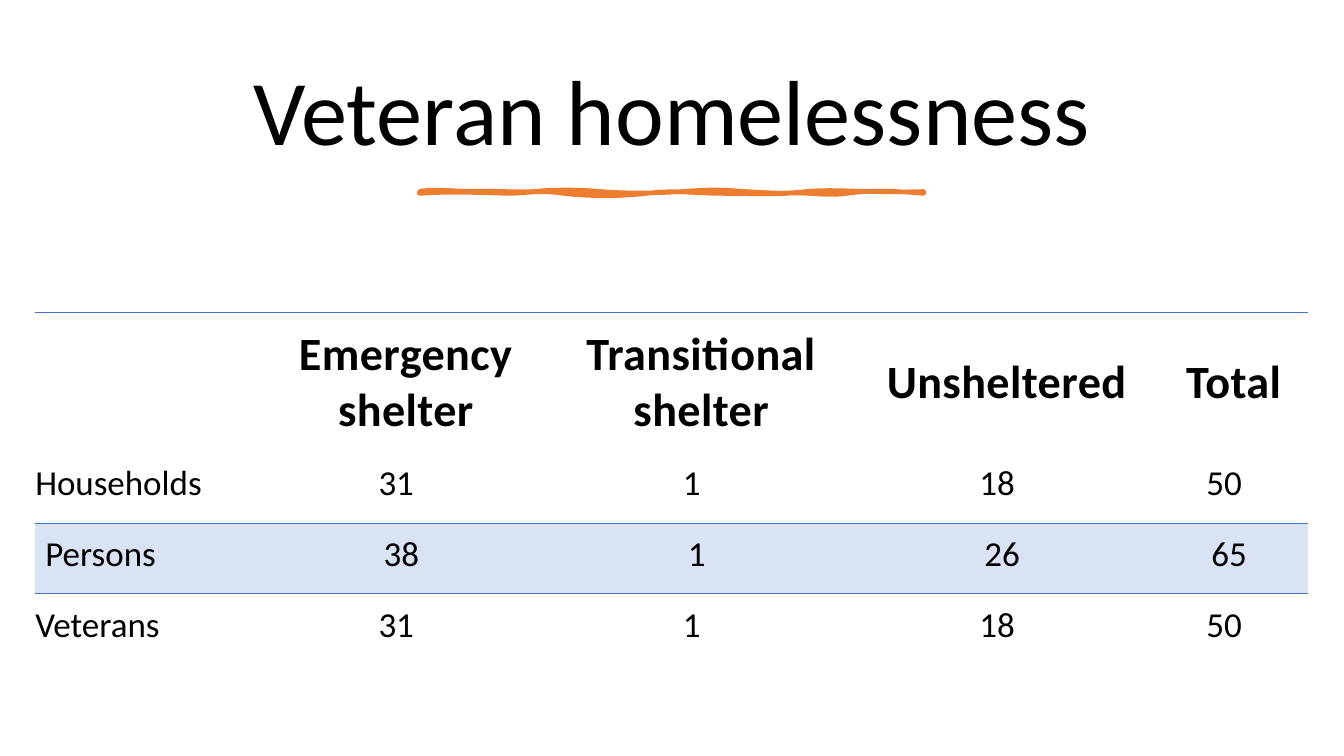
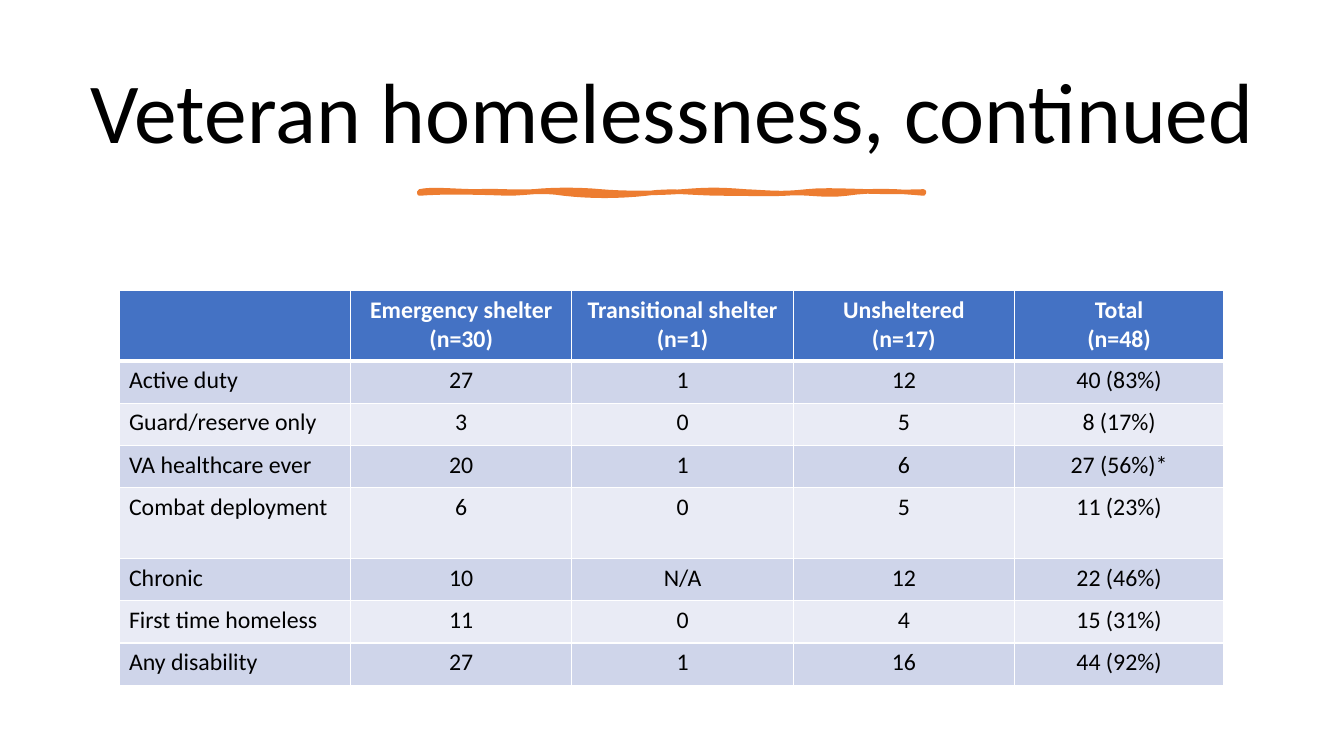
from lxml import etree
from pptx import Presentation
from pptx import util as u
from pptx.dml.color import RGBColor
from pptx.enum import text as t
from pptx.oxml.ns import qn

PX = 9144
FONT = "Calibri"
BLACK, WHITE, BLUE, ORANGE = "000000", "FFFFFF", "4472C4", "ED7D31"
HIGHLIGHT, BAND_DARK, BAND_LIGHT = "DAE3F3", "CFD5EA", "E9EBF5"
PLAIN_TABLE = "{2D5ABB26-0587-4C30-8999-92F81FD0307C}"
TITLE_BOX = (70, 46, 1193, 137)
UNDERLINE_AT = (416, 190)
UNDERLINE_CURVES = [
    (12, -3, 38, 0, 57, 0), (76, -1, 93, 1, 113, 0), (133, -2, 158, -2, 180, 0),
    (201, 2, 237, 2, 261, 0), (286, -2, 298, -2, 323, 0), (347, 1, 358, 3, 384, 0),
    (410, -3, 451, 2, 500, 0), (501, 1, 500, 1, 500, 2), (479, 0, 449, -2, 424, 2),
    (399, 5, 385, 0, 363, 2), (340, 3, 331, 2, 301, 2), (271, 2, 251, -2, 225, 2),
    (198, 5, 169, 5, 143, 2), (118, -2, 107, 2, 87, 2), (67, 1, 22, 0, 0, 2),
    (0, 1, 0, 0, 0, 0),
]

SHELTER_ROWS = [
    ["", "Emergency shelter", "Transitional shelter", "Unsheltered", "Total"],
    ["Households", "31", "1", "18", "50"],
    ["Persons", "38", "1", "26", "65"],
    ["Veterans", "31", "1", "18", "50"],
]
DETAIL_ROWS = [
    ["", "Emergency shelter\n(n=30)", "Transitional shelter\n(n=1)", "Unsheltered\n(n=17)", "Total\n(n=48)"],
    ["Active duty", "27", "1", "12", "40 (83%)"],
    ["Guard/reserve only", "3", "0", "5", "8 (17%)"],
    ["VA healthcare ever", "20", "1", "6", "27 (56%)*"],
    ["Combat deployment", "6", "0", "5", "11 (23%)"],
    ["Chronic", "10", "N/A", "12", "22 (46%)"],
    ["First time homeless", "11", "0", "4", "15 (31%)"],
    ["Any disability", "27", "1", "16", "44 (92%)"],
]


def px(length):
    return u.Emu(round(length * PX))


def rgb(color):
    return RGBColor.from_string(color)


def add_run(paragraph, words, size, color=BLACK, bold=False, spacing=0):
    run = paragraph.add_run()
    run.text = words
    run.font.name = FONT
    run.font.size = u.Pt(size)
    run.font.bold = bold
    run.font.color.rgb = rgb(color)
    if spacing:
        run.font._element.set("spc", str(spacing))


def add_title(slide, words, size, box):
    title = slide.shapes.title
    title.left, title.top, title.width, title.height = map(px, box)
    frame = title.text_frame
    frame.auto_size = t.MSO_AUTO_SIZE.NONE
    frame.word_wrap = True
    frame.vertical_anchor = t.MSO_ANCHOR.MIDDLE
    heading = frame.paragraphs[0]
    heading.alignment = t.PP_ALIGN.CENTER
    heading.line_spacing = 0.9
    add_run(heading, words, size)


def curve_points(start, curves, steps=8):
    for curve in curves:
        knots = [start, curve[:2], curve[2:4], curve[4:]]
        for step in range(1, steps + 1):
            s = step / steps
            weights = ((1 - s) ** 3, 3 * s * (1 - s) ** 2, 3 * s * s * (1 - s), s ** 3)
            yield tuple(px(sum(w * knot[axis] for w, knot in zip(weights, knots))) for axis in (0, 1))
        start = curve[4:]


def add_underline(slide, left, top):
    builder = slide.shapes.build_freeform(0, 0)
    builder.add_line_segments(curve_points((0, 0), UNDERLINE_CURVES), close=True)
    stroke = builder.convert_to_shape(px(left), px(top))
    stroke.shadow.inherit = False
    stroke.fill.solid()
    stroke.fill.fore_color.rgb = rgb(ORANGE)
    stroke.line.color.rgb = rgb(ORANGE)
    stroke.line.width = u.Pt(3.25)
    etree.SubElement(stroke._element.spPr.find(qn("a:ln")), qn("a:round"))


def set_borders(cell, borders):
    properties = cell._tc.get_or_add_tcPr()
    for side in "LRTB":
        if side in borders:
            color, width = borders[side]
            edge = etree.SubElement(properties, qn("a:ln" + side), w=str(u.Pt(width)))
            paint = etree.SubElement(edge, qn("a:solidFill"))
            etree.SubElement(paint, qn("a:srgbClr"), val=color)


def fill_cell(cell, words, align, font, margins, anchor=t.MSO_ANCHOR.TOP, fill=None, borders=None):
    set_borders(cell, borders or {})
    if fill:
        cell.fill.solid()
        cell.fill.fore_color.rgb = rgb(fill)
    else:
        cell.fill.background()
    cell.margin_left, cell.margin_top, cell.margin_right, cell.margin_bottom = map(px, margins)
    cell.vertical_anchor = anchor
    for index, line in enumerate(words.split("\n") if words else []):
        paragraph = cell.text_frame.add_paragraph() if index else cell.text_frame.paragraphs[0]
        paragraph.alignment = align
        add_run(paragraph, line, **font)


def add_grid(slide, left, top, widths, heights, rows, row_style):
    frame = slide.shapes.add_table(len(heights), len(widths), px(left), px(top),
                                   px(sum(widths)), px(sum(heights)))
    table = frame.table
    table.first_row = table.horz_banding = False
    table._tbl.tblPr.find(qn("a:tableStyleId")).text = PLAIN_TABLE
    for column, width in zip(table.columns, widths):
        column.width = px(width)
    for r, (height, values) in enumerate(zip(heights, rows)):
        table.rows[r].height = px(height)
        for c, words in enumerate(values):
            align = t.PP_ALIGN.CENTER if c or r == 0 else t.PP_ALIGN.LEFT
            fill_cell(table.cell(r, c), words, align, **row_style(r))


def shelter_style(row):
    if row == 0:
        return dict(font=dict(size=33, bold=True, spacing=30), margins=(0, 10, 2, 10),
                    anchor=t.MSO_ANCHOR.MIDDLE, borders={"T": (BLUE, 1.5)})
    persons = row == 2
    borders = {1: {"B": (BLUE, 0.75)}, 2: {"T": (BLUE, 0.75)}}.get(row)
    return dict(font=dict(size=25), margins=(10 if persons else 0, 10, 21, 10),
                fill=HIGHLIGHT if persons else None, borders=borders)


def detail_style(row):
    borders = {side: (WHITE, 1) for side in "LRTB"}
    if row == 0:
        borders["B"] = (WHITE, 3)
    elif row == 1:
        borders["T"] = (WHITE, 3)
    return dict(font=dict(size=17, color=BLACK if row else WHITE, bold=row == 0),
                margins=(10, 5, 10, 5), borders=borders,
                fill=(BAND_DARK if row % 2 else BAND_LIGHT) if row else BLUE)


def add_table_slide(deck, title, title_size, **grid):
    slide = deck.slides.add_slide(deck.slide_layouts[5])
    add_title(slide, title, title_size, TITLE_BOX)
    add_underline(slide, *UNDERLINE_AT)
    add_grid(slide, **grid)


def main():
    deck = Presentation()
    deck.slide_width, deck.slide_height = u.Inches(13.33), u.Inches(7.5)
    add_table_slide(deck, "Veteran homelessness", 66, left=35, top=310,
                    widths=[226, 285, 301, 305, 145], heights=[139] + [70] * 3,
                    rows=SHELTER_ROWS, row_style=shelter_style)
    add_table_slide(deck, "Veteran homelessness, continued", 61, left=118, top=288,
                    widths=[230, 219, 220, 219, 208],
                    heights=[70] + [42] * 3 + [70] + [42] * 3,
                    rows=DETAIL_ROWS, row_style=detail_style)
    deck.save("out.pptx")


if __name__ == "__main__":
    main()
